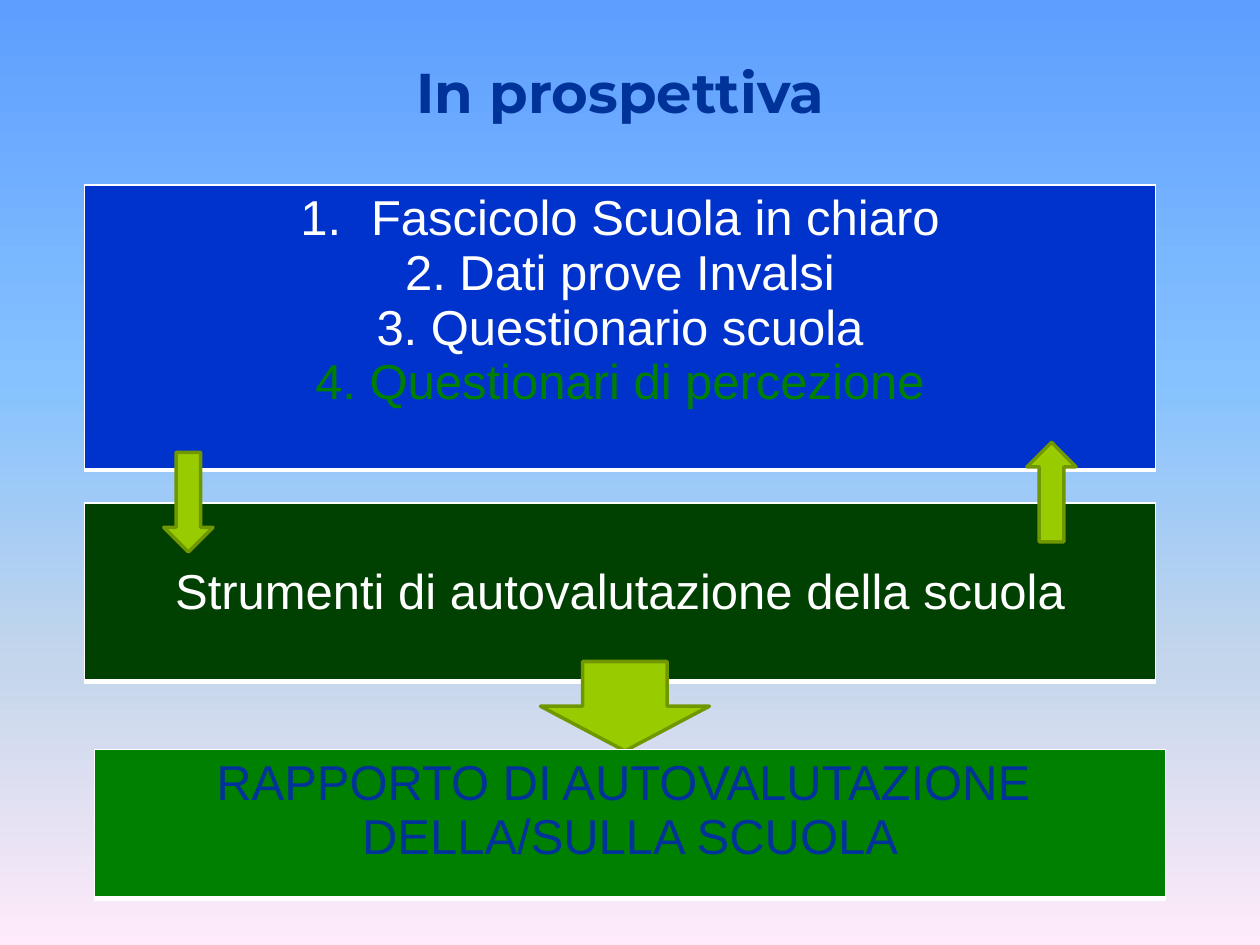
import copy

import lxml.etree
import pptx
import pptx.dml.color
import pptx.enum.shapes
import pptx.enum.text
import pptx.oxml.ns
import pptx.util

Inches, Pt = pptx.util.Inches, pptx.util.Pt
RGBColor = pptx.dml.color.RGBColor
ANCHOR = pptx.enum.text.MSO_ANCHOR
qn = pptx.oxml.ns.qn

WHITE = RGBColor(0xFF, 0xFF, 0xFF)
NAVY = RGBColor(0x00, 0x33, 0x99)
BLUE = RGBColor(0x00, 0x33, 0xCC)
GREEN = RGBColor(0x00, 0x80, 0x00)
DARK_GREEN = RGBColor(0x00, 0x40, 0x00)
LIME = RGBColor(0x99, 0xCC, 0x00)
OLIVE = RGBColor(0x71, 0x97, 0x00)

# Content
SKY = [(0, "5E9EFF"), (40, "85C2FF"), (70, "C4D6EB"), (100, "FFEBFA")]
TITLE = "In prospettiva"
PANEL_WIDTH = 8.5
HANGING = 0.56
PANELS = [
    dict(left=0.67, top=1.47, height=2.26, fill=BLUE, anchor=ANCHOR.TOP, lines=[
        ("Fascicolo Scuola in chiaro", dict(color=WHITE, hanging=HANGING, numbered=True)),
        ("2. Dati prove Invalsi", dict(color=WHITE)),
        ("3. Questionario scuola", dict(color=WHITE)),
        ("4. Questionari di percezione", dict(color=GREEN)),
    ]),
    dict(left=0.67, top=3.99, height=1.42, fill=DARK_GREEN, anchor=ANCHOR.MIDDLE, lines=[
        ("Strumenti di autovalutazione della scuola", dict(color=WHITE)),
    ]),
    dict(left=0.75, top=5.95, height=1.18, fill=GREEN, anchor=ANCHOR.TOP, lines=[
        ("RAPPORTO DI AUTOVALUTAZIONE ", dict(color=NAVY, hanging=HANGING)),
        ("DELLA/SULLA SCUOLA", dict(color=NAVY, hanging=HANGING)),
    ]),
]
# left, top, width, height, rotation
ARROWS = [
    (1.3, 3.59, 0.39, 0.79, 0),
    (8.15, 3.51, 0.39, 0.79, 180),
    (4.29, 5.25, 1.34, 0.71, 0),
]


def write(paragraph, text, size=28, font="Arial", color=WHITE, bold=False,
          hanging=0, numbered=False):
    paragraph.alignment = pptx.enum.text.PP_ALIGN.CENTER
    run = paragraph.add_run()
    run.text = text
    run.font.size, run.font.name, run.font.bold = Pt(size), font, bold
    run.font.color.rgb = color
    properties = paragraph._p.get_or_add_pPr()
    if hanging:
        properties.set("marL", str(Inches(hanging)))
        properties.set("indent", str(-Inches(hanging)))
    if numbered:
        lxml.etree.SubElement(properties, qn("a:buFont"), typeface="+mj-lt")
        lxml.etree.SubElement(properties, qn("a:buAutoNum"), type="arabicPeriod")


def set_borders(cell, widths):
    properties = cell._tc.get_or_add_tcPr()
    for position, (side, width) in enumerate(widths.items()):
        border = lxml.etree.Element(qn(f"a:ln{side}"), w=str(Pt(width)))
        fill = lxml.etree.SubElement(border, qn("a:solidFill"))
        lxml.etree.SubElement(fill, qn("a:srgbClr"), val=str(WHITE))
        properties.insert(position, border)


def paint_sky(slide):
    fill = slide.background.fill
    fill.gradient()
    fill.gradient_angle = 270
    stops = fill._fill._gradFill.find(qn("a:gsLst"))
    template = copy.deepcopy(stops[0])
    for stop in list(stops):
        stops.remove(stop)
    for position, color in SKY:
        stop = copy.deepcopy(template)
        stop.set("pos", str(position * 1000))
        for child in list(stop):
            stop.remove(child)
        lxml.etree.SubElement(stop, qn("a:srgbClr"), val=color)
        stops.append(stop)


def add_panel(slide, left, top, height, fill, anchor, lines):
    table = slide.shapes.add_table(1, 1, Inches(left), Inches(top),
                                   Inches(PANEL_WIDTH), Inches(height)).table
    table.first_row = table.horz_banding = False
    cell = table.cell(0, 0)
    cell.fill.solid()
    cell.fill.fore_color.rgb = fill
    cell.vertical_anchor = anchor
    set_borders(cell, dict(L=1, R=1, T=1, B=3))
    frame = cell.text_frame
    for index, (text, style) in enumerate(lines):
        write(frame.add_paragraph() if index else frame.paragraphs[0], text, **style)


def add_arrow(slide, left, top, width, height, rotation):
    arrow = slide.shapes.add_shape(
        pptx.enum.shapes.MSO_SHAPE.DOWN_ARROW,
        Inches(left), Inches(top), Inches(width), Inches(height))
    arrow.rotation = rotation
    arrow.shadow.inherit = False
    arrow.fill.solid()
    arrow.fill.fore_color.rgb = LIME
    arrow.line.color.rgb = OLIVE
    arrow.line.width = Pt(2)


def main():
    deck = pptx.Presentation()
    deck.slide_width, deck.slide_height = Inches(10), Inches(7.5)
    slide = deck.slides.add_slide(deck.slide_layouts[5])
    paint_sky(slide)

    # Title
    title = slide.shapes.title
    title.left, title.top = Inches(0.35), Inches(0.3)
    title.width, title.height = Inches(9.15), Inches(0.85)
    title.text_frame.vertical_anchor = ANCHOR.MIDDLE
    write(title.text_frame.paragraphs[0], TITLE, size=32, font="Montserrat",
          color=NAVY, bold=True)

    # Panels, with the arrows between the second and the last
    *sources, report = PANELS
    for panel in sources:
        add_panel(slide, **panel)
    for arrow in ARROWS:
        add_arrow(slide, *arrow)
    add_panel(slide, **report)

    deck.save("out.pptx")


if __name__ == "__main__":
    main()
